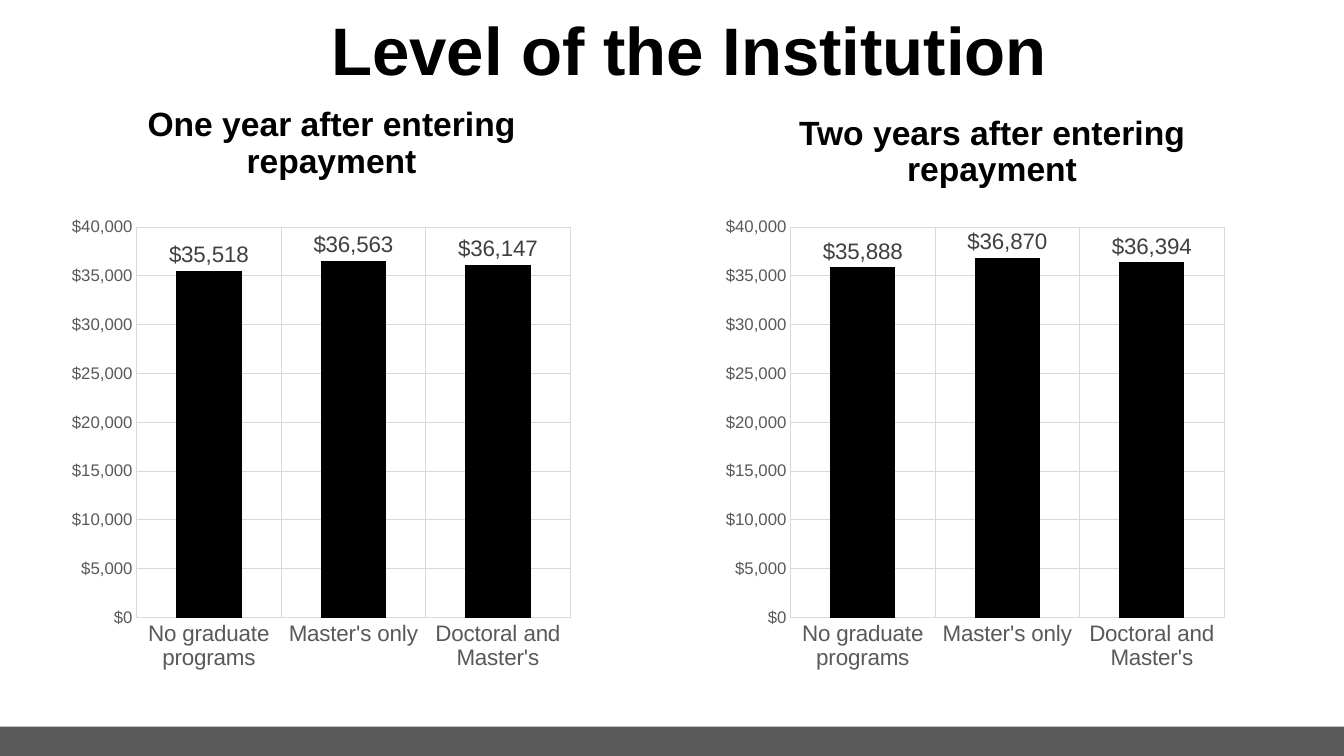
from pptx import Presentation
from pptx import util as u
from pptx.chart import data as chart_data
from pptx.dml.color import RGBColor
from pptx.enum import chart as ch, shapes, text
from pptx.util import Cm

COLOURS = {"ink": "000000", "band": "595959", "axis": "595959",
           "label": "404040", "grid": "D9D9D9"}
FONT = "Arial"
DOLLARS = '"$"#,##0'
LEVELS = ["No graduate programs", "Master's only", "Doctoral and Master's"]


def style_font(font, size, colour, bold=False):
    font.name, font.size, font.bold = FONT, u.Pt(size), bold
    font.color.rgb = RGBColor.from_string(COLOURS[colour])


def add_heading(wording, left, top, width, height, size):
    frame = slide.shapes.add_textbox(Cm(left), Cm(top), Cm(width), Cm(height)).text_frame
    frame.word_wrap = True
    frame.vertical_anchor = text.MSO_ANCHOR.MIDDLE
    paragraph = frame.paragraphs[0]
    paragraph.text = wording
    paragraph.alignment = text.PP_ALIGN.CENTER
    paragraph.line_spacing = 0.9
    style_font(paragraph.font, size, "ink", bold=True)


deck = Presentation()
deck.slide_width, deck.slide_height = Cm(33.87), Cm(19.05)
slide = deck.slides.add_slide(deck.slide_layouts[6])

# Footer band
band = slide.shapes.add_shape(shapes.MSO_SHAPE.RECTANGLE, 0, Cm(18.31), deck.slide_width, Cm(0.74))
band.shadow.inherit = False
band.fill.solid()
band.fill.fore_color.rgb = RGBColor.from_string(COLOURS["band"])
band.line.fill.background()

# Title and chart headings
add_heading("Level of the Institution", 1.55, 0.28, 31.65, 2.16, 48)
add_heading("One year after entering repayment", 1.55, 2.44, 13.61, 2.39, 24)
add_heading("Two years after entering repayment", 17.7, 2.77, 14.6, 2.16, 24)

# One chart per year after entering repayment
for left, amounts in ((1.55, (35518, 36563, 36147)), (18.03, (35888, 36870, 36394))):
    balances = chart_data.CategoryChartData(number_format=DOLLARS)
    balances.categories = LEVELS
    balances.add_series("Series 1", amounts)
    chart = slide.shapes.add_chart(ch.XL_CHART_TYPE.COLUMN_CLUSTERED, Cm(left), Cm(5.26),
                                   Cm(13.08), Cm(11.86), balances).chart
    chart.has_legend = False
    chart.has_title = False
    style_font(chart.font, 10, "ink")

    # Columns and their labels
    plot = chart.plots[0]
    plot.vary_by_categories = False
    plot.gap_width, plot.overlap = 121, -27
    columns = plot.series[0]
    columns.format.fill.solid()
    columns.format.fill.fore_color.rgb = RGBColor.from_string(COLOURS["ink"])
    labels = columns.data_labels
    labels.show_value = True
    labels.position = ch.XL_LABEL_POSITION.OUTSIDE_END
    labels.number_format, labels.number_format_is_linked = DOLLARS, False
    style_font(labels.font, 16, "label")

    # Axes and gridlines
    levels_axis, dollars_axis = chart.category_axis, chart.value_axis
    for axis, size in ((levels_axis, 16), (dollars_axis, 12)):
        axis.major_tick_mark = axis.minor_tick_mark = ch.XL_TICK_MARK.NONE
        style_font(axis.tick_labels.font, size, "axis")
        axis.has_major_gridlines = True
        for line in (axis.major_gridlines.format.line, axis.format.line):
            line.width = u.Pt(0.75)
            line.color.rgb = RGBColor.from_string(COLOURS["grid"])
    dollars_axis.format.line.fill.background()
    dollars_axis.minimum_scale, dollars_axis.maximum_scale = 0, 40000
    dollars_axis.major_unit = 5000
    dollars_axis.tick_labels.number_format = DOLLARS
    dollars_axis.tick_labels.number_format_is_linked = False

deck.save("out.pptx")
